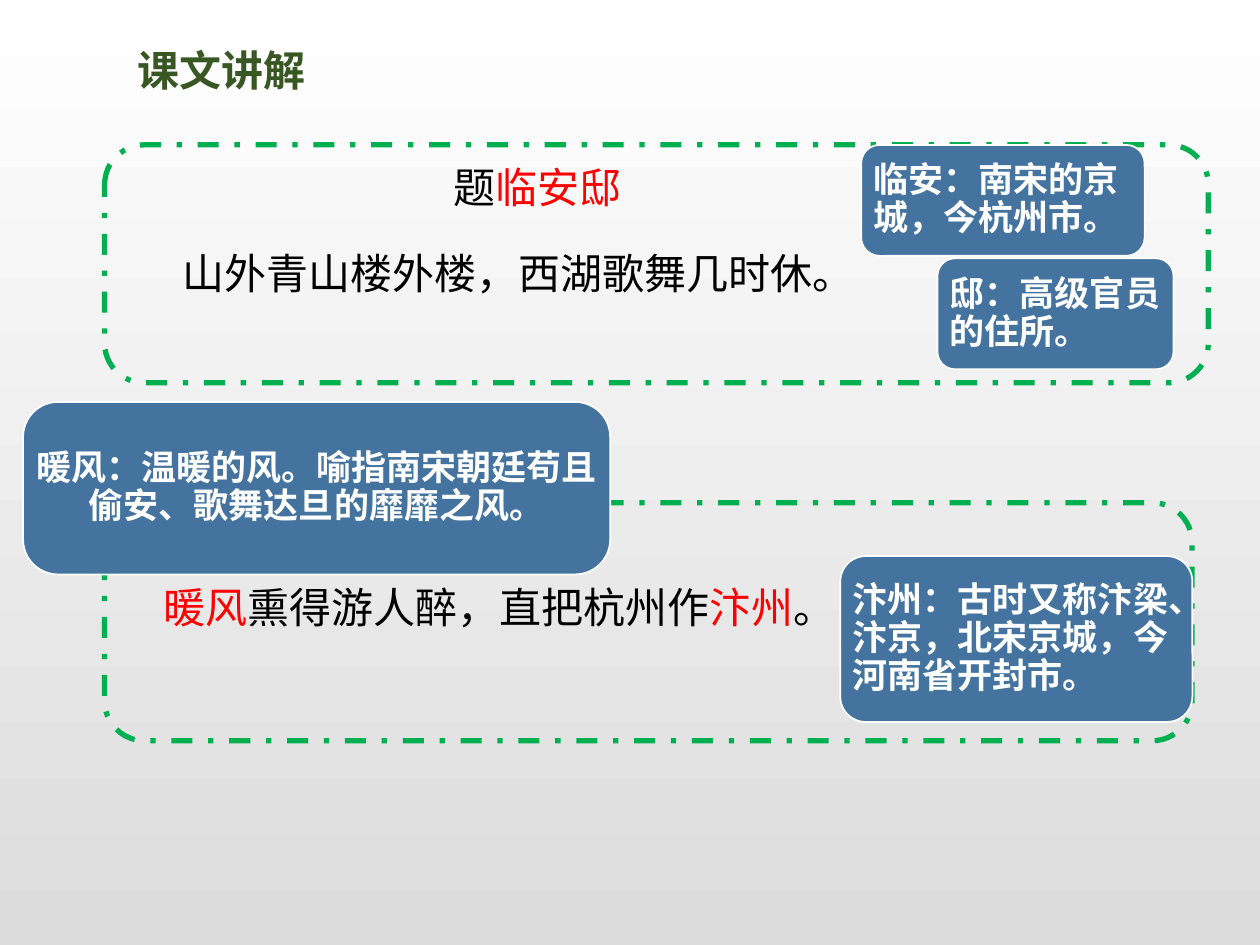
import pptx
import pptx.dml.color
import pptx.enum.dml
import pptx.enum.shapes
import pptx.enum.text
import pptx.oxml.ns
import pptx.util
from lxml import etree

Pt = pptx.util.Pt
ALIGN = pptx.enum.text.PP_ALIGN
ANCHOR = pptx.enum.text.MSO_ANCHOR
AUTO_SIZE = pptx.enum.text.MSO_AUTO_SIZE

FONT = "Noto Sans CJK SC"
BLACK, RED, WHITE = "000000", "FF0000", "FFFFFF"
CORNER_INSET = 0.29  # share of the corner radius kept free of text


def color(hex_string):
    return pptx.dml.color.RGBColor.from_string(hex_string)


def style_run(run, size, hex_string, bold=False):
    run.font.size = Pt(size)
    run.font.bold = bold
    run.font.color.rgb = color(hex_string)
    run.font.name = FONT
    east_asian = etree.SubElement(run.font._element, pptx.oxml.ns.qn("a:ea"))
    east_asian.set("typeface", FONT)


def set_background(slide, top, bottom):
    fill = slide.background.fill
    fill.gradient()
    fill.gradient_angle = 270
    for stop, hex_string in zip(fill.gradient_stops, (top, bottom)):
        stop.color.rgb = color(hex_string)


def add_rounded(slide, box, radius):
    shape = slide.shapes.add_shape(
        pptx.enum.shapes.MSO_SHAPE.ROUNDED_RECTANGLE, *map(Pt, box))
    shape.adjustments[0] = radius / min(box[2:])
    shape.shadow.inherit = False
    return shape


def add_frame(slide, box):
    frame = add_rounded(slide, box, radius=box[3] / 6)
    frame.fill.background()
    frame.line.color.rgb = color("00B050")
    frame.line.width = Pt(3)
    frame.line.dash_style = pptx.enum.dml.MSO_LINE.DASH_DOT


def add_note(slide, box, radius, text, align=ALIGN.LEFT):
    note = add_rounded(slide, box, radius)
    note.fill.solid()
    note.fill.fore_color.rgb = color("43739E")
    note.line.color.rgb = color(WHITE)
    note.line.width = Pt(1)

    frame = note.text_frame
    frame.word_wrap = True
    frame.vertical_anchor = ANCHOR.MIDDLE
    inset = Pt(7 - CORNER_INSET * radius)
    frame.margin_left = frame.margin_right = inset
    frame.margin_top = frame.margin_bottom = inset
    frame.text = text
    paragraph = frame.paragraphs[0]
    paragraph.alignment = align
    paragraph.line_spacing = 0.9
    style_run(paragraph.runs[0], 20, WHITE, bold=True)


def add_title(slide, box, text):
    frame = slide.shapes.add_textbox(*map(Pt, box)).text_frame
    frame.word_wrap = False
    frame.auto_size = AUTO_SIZE.SHAPE_TO_FIT_TEXT
    frame.margin_left = frame.margin_right = Pt(5)
    frame.margin_top = frame.margin_bottom = Pt(3)
    frame.text = text
    frame.paragraphs[0].alignment = ALIGN.CENTER
    style_run(frame.paragraphs[0].runs[0], 24, "385723", bold=True)


def add_verses(slide, box, verses):
    """Each verse is an alignment and a list of (text, colour) parts."""
    frame = slide.shapes.add_textbox(*map(Pt, box)).text_frame
    frame.word_wrap = True
    frame.auto_size = AUTO_SIZE.SHAPE_TO_FIT_TEXT
    for index, (align, parts) in enumerate(verses):
        verse = frame.add_paragraph() if index else frame.paragraphs[0]
        verse.alignment = align
        verse.line_spacing = 1.5
        verse.space_after = Pt(6)
        for text, hex_string in parts:
            run = verse.add_run()
            run.text = text
            style_run(run, 24, hex_string)


def main():
    presentation = pptx.Presentation()
    presentation.slide_width, presentation.slide_height = Pt(720), Pt(540)
    slide = presentation.slides.add_slide(presentation.slide_layouts[6])
    set_background(slide, WHITE, "DCDCDC")

    add_title(slide, (72.7, 22.3, 108, 34.6), "课文讲解")

    # Poem title and first couplet, with notes on the place names
    add_frame(slide, (59.8, 82.8, 630.7, 136))
    add_verses(slide, (97.2, 74.2, 419.8, 128.2), [
        (ALIGN.CENTER, [("题", BLACK), ("临安邸", RED)]),
        (ALIGN.LEFT, [("山外青山楼外楼，西湖歌舞几时休。", BLACK)]),
    ])
    add_note(slide, (492.1, 82.8, 162, 63.4), 10.5, "临安：南宋的京城，今杭州市。")
    add_note(slide, (535.7, 147.6, 134.9, 63.4), 10, "邸：高级官员的住所。")

    # Second couplet, with notes on the wind and the old capital
    add_frame(slide, (59.8, 287.3, 621.4, 136))
    add_verses(slide, (86.4, 314.6, 634.3, 51.1), [
        (ALIGN.LEFT, [("暖风", RED), ("熏得游人醉，直把杭州作", BLACK),
                      ("汴州", RED), ("。", BLACK)]),
    ])
    add_note(slide, (13.2, 229.7, 335.5, 98.6), 20,
             "暖风：温暖的风。喻指南宋朝廷苟且偷安、歌舞达旦的靡靡之风。",
             ALIGN.CENTER)
    add_note(slide, (480.2, 317.8, 201.2, 94.8), 14.5,
             "汴州：古时又称汴梁、汴京，北宋京城，今河南省开封市。")

    presentation.save("out.pptx")


if __name__ == "__main__":
    main()
